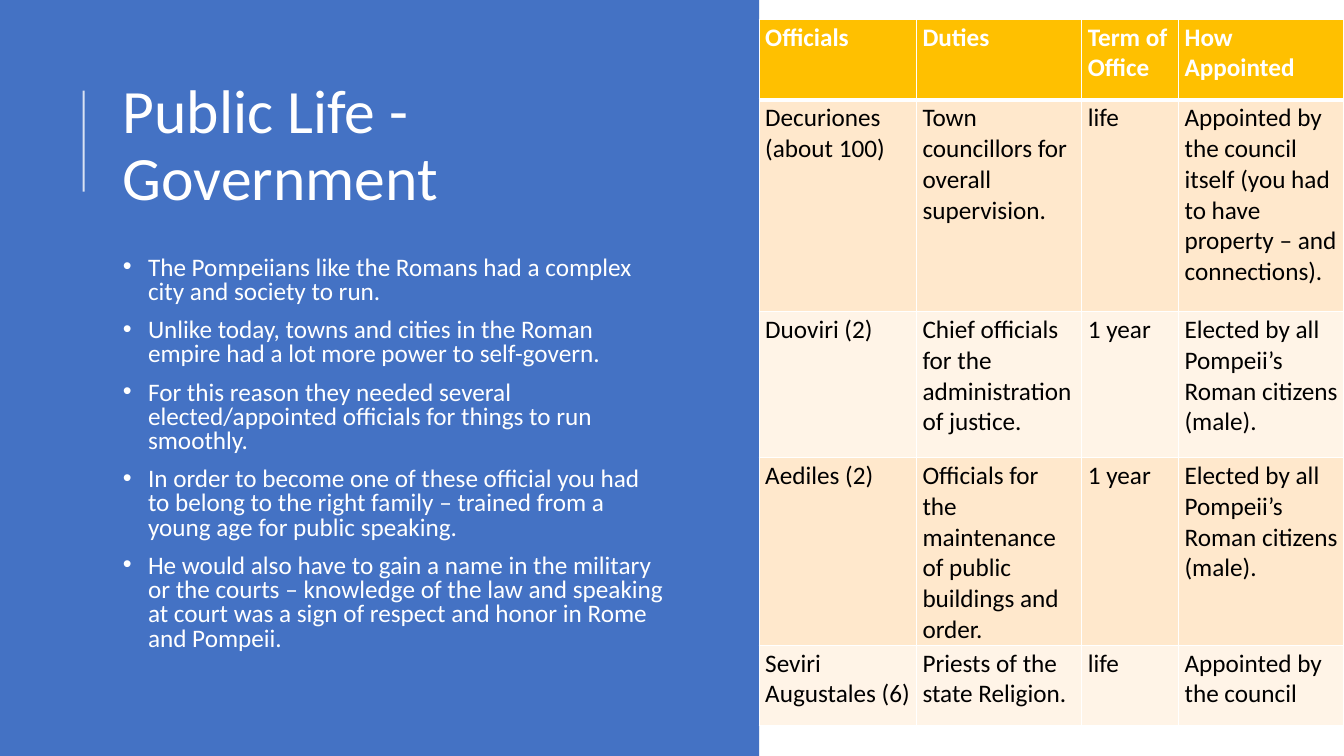
import pptx
import pptx.dml.color
import pptx.enum.shapes
import pptx.enum.text
import pptx.oxml
import pptx.oxml.ns
import pptx.util
from lxml import etree
from pptx.util import Inches

COLORS = {
    "panel": "4472C4",
    "white": "FFFFFF",
    "black": "000000",
    "header": "FFC000",
    "odd_row": "FFE8CC",
    "even_row": "FFF4E7",
}

DUTIES_OF_CITIZENS = [
    "The Pompeiians like the Romans had a complex city and society to run.",
    "Unlike today, towns and cities in the Roman empire had a lot more power to self-govern.",
    "For this reason they needed several elected/appointed officials for things to run smoothly.",
    "In order to become one of these official you had to belong to the right family – "
    "trained from a young age for public speaking.",
    "He would also have to gain a name in the military or the courts – knowledge of the law "
    "and speaking at court was a sign of respect and honor in Rome and Pompeii.",
]

ELECTED = "Elected by all Pompeii’s Roman citizens (male)."
OFFICIALS = [
    ["Officials", "Duties", "Term of Office", "How Appointed"],
    ["Decuriones (about 100)", "Town councillors for overall supervision.", "life",
     "Appointed by the council itself (you had to have property – and connections)."],
    ["Duoviri (2)", "Chief officials for the administration of justice.", "1 year", ELECTED],
    ["Aediles (2)", "Officials for the maintenance of public buildings and order.", "1 year",
     ELECTED],
    ["Seviri Augustales (6)", "Priests of the state Religion.", "life",
     "Appointed by the council"],
]
COLUMN_WIDTHS = [1.56, 1.64, 0.96, 1.64]
ROW_HEIGHTS = [0.8, 2.1, 1.45, 1.45, 0.8]


def rgb(name):
    """Return the named palette colour."""
    return pptx.dml.color.RGBColor.from_string(COLORS[name])


def sub(parent, tag, **attributes):
    """Append a DrawingML child element and return it."""
    return etree.SubElement(parent, pptx.oxml.ns.qn(tag), **attributes)


def write_text(frame, paragraphs, size=18, color="white", bold=False, spacing=None,
               before=None, bullet=None):
    """Fill a text frame with formatted paragraphs."""
    frame.word_wrap = True
    for index, words in enumerate(paragraphs):
        paragraph = frame.add_paragraph() if index else frame.paragraphs[0]
        if spacing:
            paragraph.line_spacing = spacing
        if before:
            paragraph.space_before = pptx.util.Pt(before)
        if bullet:
            properties = paragraph._p.get_or_add_pPr()
            properties.set("marL", str(Inches(0.25)))
            properties.set("indent", str(-Inches(0.25)))
            sub(properties, "a:buFont", typeface="Arial")
            sub(properties, "a:buChar", char=bullet)
        run = paragraph.add_run()
        run.text = words
        run.font.name = "Calibri"
        run.font.size = pptx.util.Pt(size)
        run.font.bold = bold
        run.font.color.rgb = rgb(color)


def add_panel(slide, left, top, width, height):
    """Add the coloured panel behind the title and bullets."""
    panel = slide.shapes.add_shape(
        pptx.enum.shapes.MSO_SHAPE.RECTANGLE,
        Inches(left), Inches(top), Inches(width), Inches(height))
    panel.shadow.inherit = False
    panel.fill.solid()
    panel.fill.fore_color.rgb = rgb("panel")
    panel.line.fill.background()


def add_text(slide, left, top, width, height, paragraphs, middle=False, **style):
    """Add a text box with formatted paragraphs."""
    box = slide.shapes.add_textbox(Inches(left), Inches(top), Inches(width), Inches(height))
    anchors = pptx.enum.text.MSO_ANCHOR
    box.text_frame.vertical_anchor = anchors.MIDDLE if middle else anchors.TOP
    write_text(box.text_frame, paragraphs, **style)


def add_title_rule(slide, x, bottom, top):
    """Add the translucent vertical rule beside the title."""
    rule = slide.shapes.add_connector(
        pptx.enum.shapes.MSO_CONNECTOR.STRAIGHT,
        Inches(x), Inches(bottom), Inches(x), Inches(top))
    rule.line.width = pptx.util.Pt(1.5)
    rule.line.color.rgb = rgb("white")
    shade = rule.line._ln.find(".//" + pptx.oxml.ns.qn("a:srgbClr"))
    sub(shade, "a:alpha", val="80000")
    sub(rule._element.spPr, "a:effectLst")


def set_borders(cell, top, bottom):
    """Draw white cell borders with the given top and bottom widths in points."""
    properties = cell._tc.get_or_add_tcPr()
    for side, points in (("L", 1), ("R", 1), ("T", top), ("B", bottom)):
        border = sub(properties, "a:ln" + side, w=str(pptx.util.Pt(points)))
        sub(sub(border, "a:solidFill"), "a:srgbClr", val=COLORS["white"])


def add_officials_table(slide, left, top):
    """Add the table of officials with a header and banded rows."""
    table = slide.shapes.add_table(
        len(OFFICIALS), len(COLUMN_WIDTHS), Inches(left), Inches(top),
        Inches(sum(COLUMN_WIDTHS)), Inches(sum(ROW_HEIGHTS))).table
    for column, width in zip(table.columns, COLUMN_WIDTHS):
        column.width = Inches(width)
    for number, (row, height, entries) in enumerate(zip(table.rows, ROW_HEIGHTS, OFFICIALS)):
        row.height = Inches(height)
        heading = number == 0
        band = "header" if heading else "odd_row" if number % 2 else "even_row"
        for cell, entry in zip(row.cells, entries):
            cell.margin_left = cell.margin_right = Inches(0.06)
            cell.margin_top = cell.margin_bottom = Inches(0.03)
            set_borders(cell, top=3 if number == 1 else 1, bottom=3 if heading else 1)
            cell.fill.solid()
            cell.fill.fore_color.rgb = rgb(band)
            write_text(cell.text_frame, [entry], bold=heading,
                       color="white" if heading else "black")


def main():
    """Build the slide and save it."""
    deck = pptx.Presentation()
    deck.slide_width = Inches(13.33)
    deck.slide_height = Inches(7.5)
    slide = deck.slides.add_slide(deck.slide_layouts[6])
    add_panel(slide, 0, 0, 7.53, 7.5)
    add_text(slide, 1.12, 0.64, 5.54, 1.64, ["Public Life - Government"],
             middle=True, size=44, spacing=0.9)
    add_title_rule(slide, 0.83, 1.9, 0.9)
    add_text(slide, 1.12, 2.5, 5.56, 4.3, DUTIES_OF_CITIZENS,
             spacing=0.8, before=10, bullet="•")
    add_officials_table(slide, 7.53, 0.19)
    deck.save("out.pptx")


if __name__ == "__main__":
    main()
